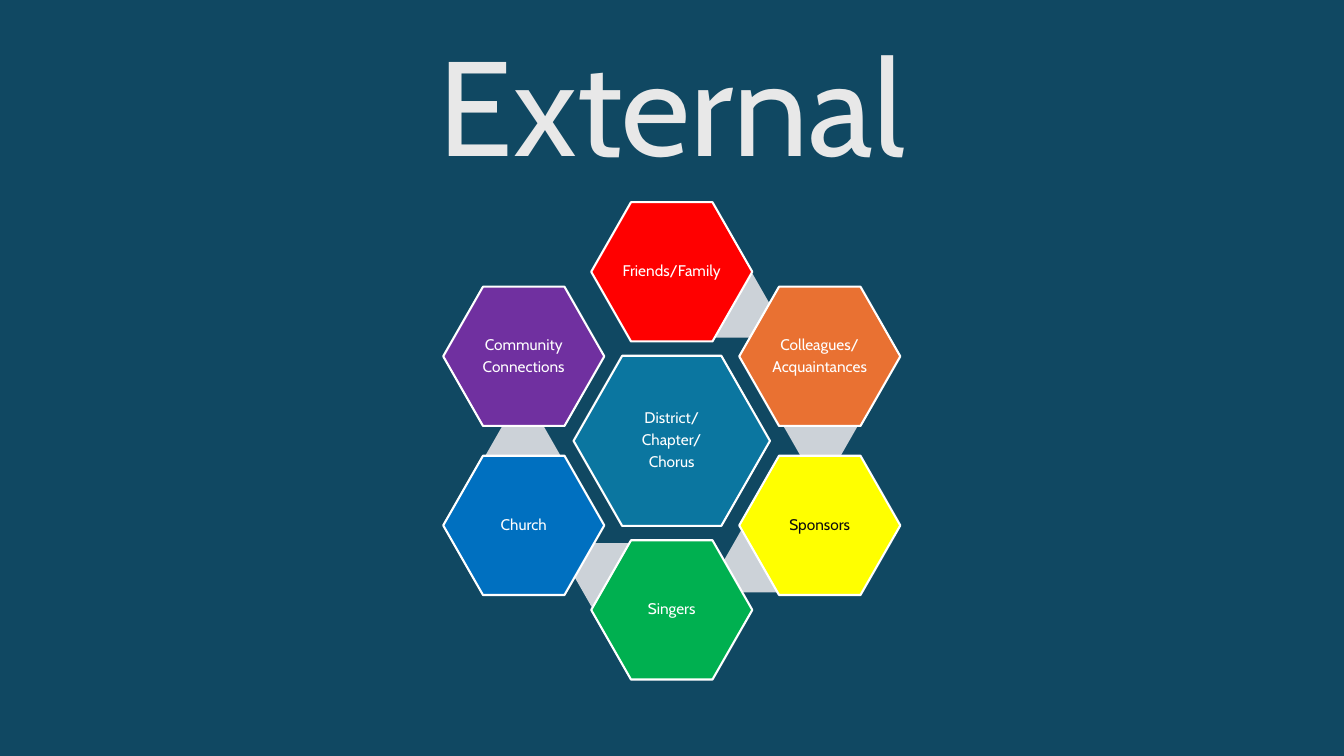
from dataclasses import dataclass

from pptx import Presentation
from pptx.dml.color import RGBColor
from pptx.enum.shapes import MSO_SHAPE
from pptx.enum.text import MSO_ANCHOR, PP_ALIGN
from pptx.util import Cm, Pt


@dataclass
class Theme:
    font: str = "Cabin"
    back: str = "104862"
    title: str = "E8E8E8"
    light: str = "FFFFFF"
    dark: str = "0D0D0D"
    bridge: str = "CCD2D8"
    hub: str = "0B76A0"
    red: str = "FF0000"
    orange: str = "E97132"
    yellow: str = "FFFF00"
    green: str = "00B050"
    blue: str = "0070C0"
    purple: str = "7030A0"
    big: float = 96
    small: float = 11
    after: float = 3.85
    edge: float = 1.5


class Board:
    def __init__(self, slide, theme):
        self.slide = slide
        self.theme = theme
        fill = slide.background.fill
        fill.solid()
        fill.fore_color.rgb = RGBColor.from_string(theme.back)

    def letter(self, frame, lines, size, color, after=0):
        """Fill a text frame with centred lines, one paragraph each."""
        frame.vertical_anchor = MSO_ANCHOR.MIDDLE
        for i, line in enumerate(lines):
            para = frame.paragraphs[0] if i == 0 else frame.add_paragraph()
            para.text = line
            para.alignment = PP_ALIGN.CENTER
            para.line_spacing = 0.9
            para.space_after = Pt(after)
            para.font.name = self.theme.font
            para.font.size = Pt(size)
            para.font.color.rgb = RGBColor.from_string(color)

    def title(self, text, left, top, width, height):
        box = self.slide.shapes.add_textbox(Cm(left), Cm(top), Cm(width), Cm(height))
        box.text_frame.word_wrap = True
        self.letter(box.text_frame, [text], self.theme.big, self.theme.title)

    def hexagon(self, center, size, color):
        (x, y), (width, height) = center, size
        shape = self.slide.shapes.add_shape(
            MSO_SHAPE.HEXAGON, Cm(x - width / 2), Cm(y - height / 2), Cm(width), Cm(height))
        shape.adjustments[0] = 0.286
        shape.shadow.inherit = False
        shape.fill.solid()
        shape.fill.fore_color.rgb = RGBColor.from_string(color)
        shape.line.fill.background()
        return shape

    def label(self, center, size, color, lines, ink):
        """Draw an outlined hexagon with centred text."""
        shape = self.hexagon(center, size, color)
        shape.line.color.rgb = RGBColor.from_string(self.theme.light)
        shape.line.width = Pt(self.theme.edge)
        frame = shape.text_frame
        frame.word_wrap = False
        frame.margin_left = frame.margin_right = Cm(0.05)
        frame.margin_top = frame.margin_bottom = Cm(0.05)
        self.letter(frame, lines, self.theme.small, ink, self.theme.after)


def main():
    deck = Presentation()
    deck.slide_width, deck.slide_height = Cm(33.87), Cm(19.05)
    theme = Theme()
    board = Board(deck.slides.add_slide(deck.slide_layouts[6]), theme)
    board.title("External", 2.33, 1.01, 29.21, 3.68)

    hub = (16.93, 11.11)
    col, row = 3.73, 2.13

    def place(dx, dy):
        return hub[0] + dx, hub[1] + dy

    board.label(hub, (4.95, 4.29), theme.hub, ["District/", "Chapter/", "Chorus"], theme.light)

    # Clockwise from the top: column, row, fill, text, ink, bridge offset from the hub
    ring = [
        (0, -2, theme.red, ["Friends/Family"], theme.light, (1.56, -3.4)),
        (1, -1, theme.orange, ["Colleagues/", "Acquaintances"], theme.light, (3.75, -0.38)),
        (1, 1, theme.yellow, ["Sponsors"], theme.dark, (2.25, 3.02)),
        (0, 2, theme.green, ["Singers"], theme.light, (-1.54, 3.38)),
        (-1, 1, theme.blue, ["Church"], theme.light, (-3.75, 0.36)),
        (-1, -1, theme.purple, ["Community", "Connections"], theme.light, None),
    ]
    for x, y, color, lines, ink, bridge in ring:
        if bridge:
            board.hexagon(place(*bridge), (1.88, 1.6), theme.bridge)
        board.label(place(x * col, y * row), (4.06, 3.51), color, lines, ink)

    deck.save("out.pptx")


if __name__ == "__main__":
    main()
